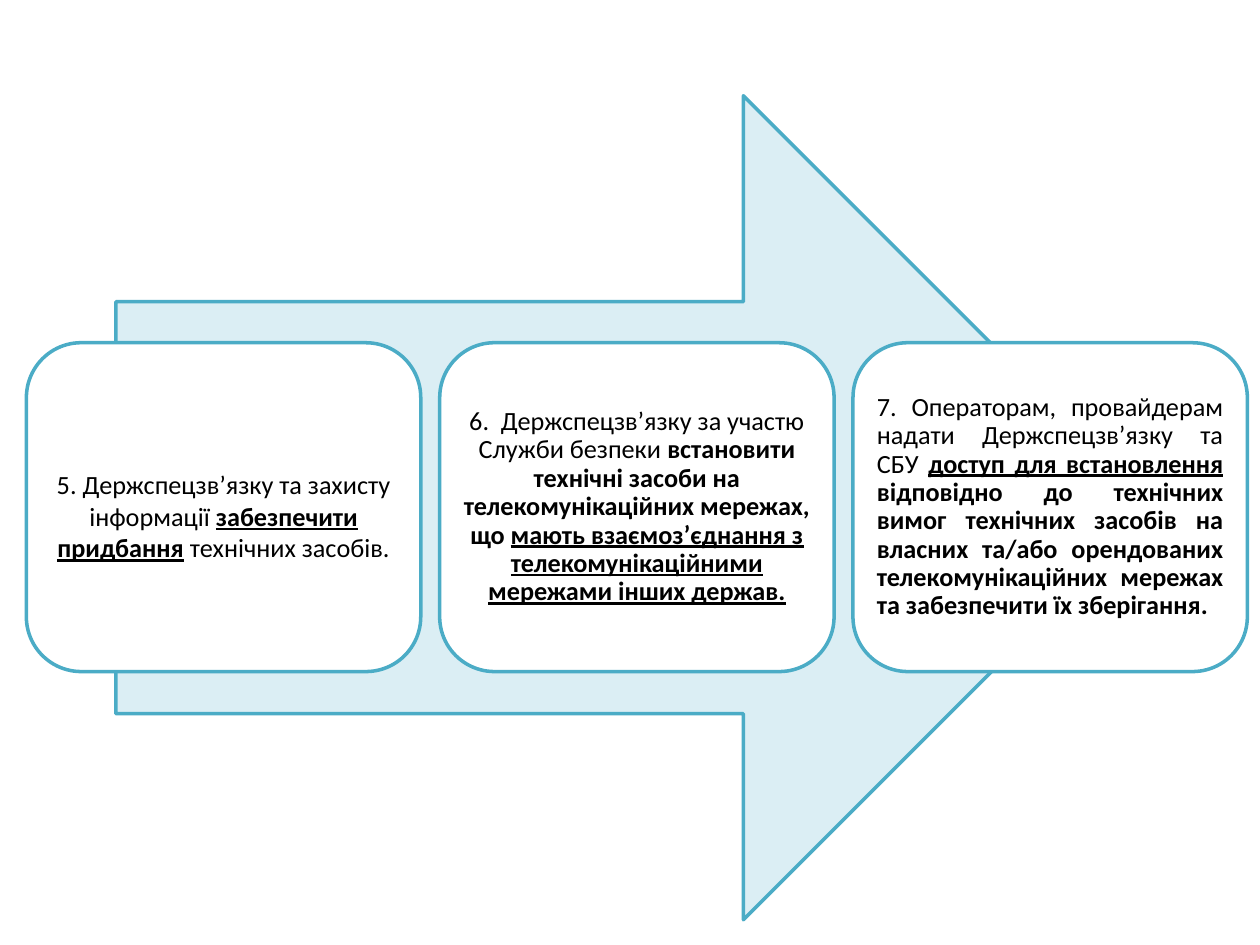
from dataclasses import dataclass

from pptx import Presentation
from pptx.dml.color import RGBColor
from pptx.enum.shapes import MSO_SHAPE
from pptx.enum.text import MSO_ANCHOR, PP_ALIGN
from pptx.util import Inches, Pt


@dataclass(frozen=True)
class Theme:
    """Colours, type and line sizes of the slide."""
    arrow_fill: RGBColor = RGBColor(0xDB, 0xEE, 0xF4)
    card_fill: RGBColor = RGBColor(0xFF, 0xFF, 0xFF)
    outline: RGBColor = RGBColor(0x4B, 0xAC, 0xC6)
    text: RGBColor = RGBColor(0, 0, 0)
    font: str = "Calibri"
    size: int = 15
    line: int = 2


THEME = Theme()
CARD_LEFT, CARD_TOP, CARD_WIDTH, CARD_HEIGHT = 0.21, 2.72, 3.13, 2.61
CARD_STEP = 3.28
TEXT_MARGIN = 0.13
TEXT_INSET = 0.06

PLAIN = {}
BOLD = {"bold": True}
KEY = {"bold": True, "underline": True}

STEPS = [
    {
        "align": PP_ALIGN.CENTER, "spacing": 1.0, "drop": 0.14,
        "runs": [
            ("5. Держспецзв’язку та захисту інформації ", PLAIN),
            ("забезпечити придбання", KEY),
            (" ", BOLD),
            ("технічних засобів.", PLAIN),
        ],
    },
    {
        "align": PP_ALIGN.CENTER, "spacing": 0.9, "drop": 0,
        "runs": [
            ("6.  Держспецзв’язку за участю Служби безпеки ", PLAIN),
            ("встановити технічні засоби на телекомунікаційних мережах, що ", BOLD),
            ("мають взаємоз’єднання з телекомунікаційними мережами інших держав.", KEY),
        ],
    },
    {
        "align": PP_ALIGN.JUSTIFY, "spacing": 0.9, "drop": 0,
        "runs": [
            ("7. Операторам, провайдерам надати Держспецзв’язку та СБУ ", PLAIN),
            ("доступ для встановлення ", KEY),
            ("відповідно до технічних вимог технічних засобів на власних та/або "
             "орендованих телекомунікаційних мережах та забезпечити їх зберігання.", BOLD),
        ],
    },
]


def set_attributes(target, values):
    """Set each named attribute of the target."""
    for name, value in values.items():
        setattr(target, name, value)


def add_outlined(slide, kind, box, fill):
    """Add a filled preset shape with the theme outline."""
    shape = slide.shapes.add_shape(kind, *map(Inches, box))
    shape.shadow.inherit = False
    shape.fill.solid()
    shape.fill.fore_color.rgb = fill
    shape.line.color.rgb = THEME.outline
    shape.line.width = Pt(THEME.line)


def add_step_text(slide, box, step):
    """Add the mixed-format wording of one step."""
    frame = slide.shapes.add_textbox(*map(Inches, box)).text_frame
    inset = Inches(TEXT_INSET)
    set_attributes(frame, {
        "word_wrap": True, "vertical_anchor": MSO_ANCHOR.MIDDLE,
        "margin_left": inset, "margin_right": inset, "margin_bottom": inset,
        "margin_top": Inches(TEXT_INSET + step["drop"]),
    })
    paragraph = frame.paragraphs[0]
    set_attributes(paragraph, {
        "alignment": step["align"], "line_spacing": step["spacing"],
    })
    for wording, emphasis in step["runs"]:
        run = paragraph.add_run()
        run.text = wording
        set_attributes(run.font, {
            "name": THEME.font, "size": Pt(THEME.size), **emphasis,
        })
        run.font.color.rgb = THEME.text


def add_step(slide, index, step):
    """Add one rounded card and its wording."""
    left = CARD_LEFT + index * CARD_STEP
    card = (left, CARD_TOP, CARD_WIDTH, CARD_HEIGHT)
    wording = (left + TEXT_MARGIN, CARD_TOP + TEXT_MARGIN,
               CARD_WIDTH - 2 * TEXT_MARGIN, CARD_HEIGHT - 2 * TEXT_MARGIN)
    add_outlined(slide, MSO_SHAPE.ROUNDED_RECTANGLE, card, THEME.card_fill)
    add_step_text(slide, wording, step)


def main():
    """Build the slide and save it."""
    deck = Presentation()
    set_attributes(deck, {"slide_width": Inches(10), "slide_height": Inches(7.5)})
    slide = deck.slides.add_slide(deck.slide_layouts[6])
    add_outlined(slide, MSO_SHAPE.RIGHT_ARROW, (0.92, 0.76, 8.25, 6.54), THEME.arrow_fill)
    for index, step in enumerate(STEPS):
        add_step(slide, index, step)
    deck.save("out.pptx")


if __name__ == "__main__":
    main()
